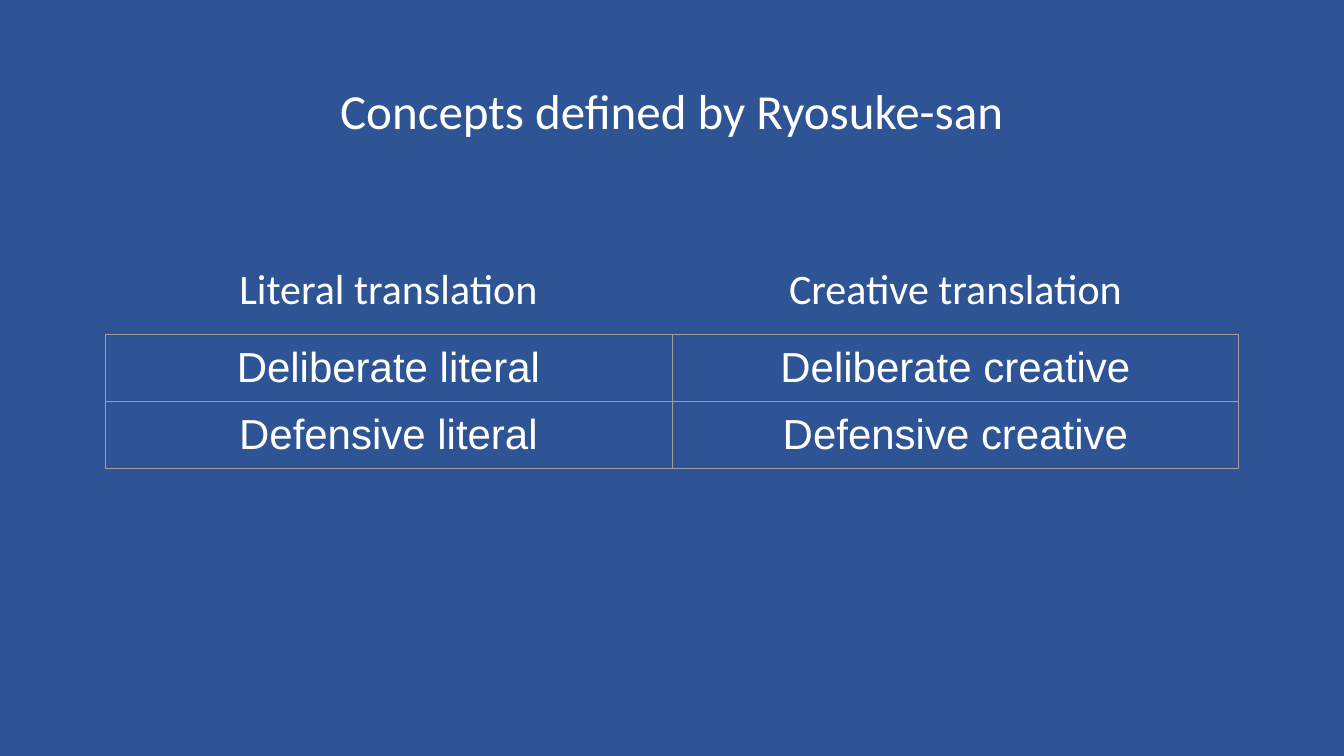
from dataclasses import dataclass

from lxml import etree
from pptx import Presentation
from pptx.dml.color import RGBColor
from pptx.enum.text import MSO_ANCHOR, PP_ALIGN
from pptx.oxml.ns import qn
from pptx.util import Pt

CENTER = PP_ALIGN.CENTER
TOP = MSO_ANCHOR.TOP
MIDDLE = MSO_ANCHOR.MIDDLE

COLORS = {"background": "2F5496", "text": "FFFFFF", "border": "9E9E9E"}
BORDER_SIDES = ("a:lnL", "a:lnR", "a:lnT", "a:lnB")
BORDER_WIDTH = 0.75
MARGIN = 7.2

TABLE_LEFT = 75
TABLE_TOP = 239
TABLE_HEIGHT = 100.8
COLUMN_WIDTH = 405
ROW_HEIGHT = 30
HEADING_TOP = 180
HEADING_HEIGHT = 51

CONCEPTS = [
    ["Deliberate literal", "Deliberate creative"],
    ["Defensive literal", "Defensive creative"],
]


@dataclass(frozen=True)
class Label:
    text: str
    left: float
    top: float
    width: float
    height: float
    size: float = 30
    anchor: MSO_ANCHOR = TOP
    margin_y: float = MARGIN
    line_spacing: float = 1.0


LABELS = [
    Label("Concepts defined by Ryosuke-san", 66, 28.8, 828, 104.4,
          size=35, anchor=MIDDLE, margin_y=3.6, line_spacing=0.9),
] + [
    Label(text, TABLE_LEFT + column * COLUMN_WIDTH, HEADING_TOP,
          COLUMN_WIDTH, HEADING_HEIGHT)
    for column, text in enumerate(["Literal translation", "Creative translation"])
]


def apply_format(target, values: dict) -> None:
    for name, value in values.items():
        setattr(target, name, value)


def margins(vertical: float) -> dict:
    return {
        "margin_left": Pt(MARGIN),
        "margin_right": Pt(MARGIN),
        "margin_top": Pt(vertical),
        "margin_bottom": Pt(vertical),
    }


def write_text(frame, text: str, font_name: str, size: float,
               line_spacing: float = 1.0) -> None:
    paragraph = frame.paragraphs[0]
    apply_format(paragraph, {"alignment": CENTER, "line_spacing": line_spacing})
    run = paragraph.add_run()
    run.text = text
    apply_format(run.font, {"name": font_name, "size": Pt(size), "bold": False})
    run.font.color.rgb = RGBColor.from_string(COLORS["text"])


def draw_label(slide, label: Label) -> None:
    box = slide.shapes.add_textbox(
        Pt(label.left), Pt(label.top), Pt(label.width), Pt(label.height))
    apply_format(box.text_frame, {
        "word_wrap": True, "vertical_anchor": label.anchor, **margins(label.margin_y)})
    write_text(box.text_frame, label.text, "Calibri", label.size, label.line_spacing)


def draw_borders(cell) -> None:
    properties = cell._tc.get_or_add_tcPr()
    for side in BORDER_SIDES:
        line = etree.SubElement(properties, qn(side), w=str(Pt(BORDER_WIDTH)))
        fill = etree.SubElement(line, qn("a:solidFill"))
        etree.SubElement(fill, qn("a:srgbClr"), val=COLORS["border"])


def draw_concepts(slide, rows: list[list[str]]) -> None:
    column_count = len(rows[0])
    frame = slide.shapes.add_table(
        len(rows), column_count, Pt(TABLE_LEFT), Pt(TABLE_TOP),
        Pt(COLUMN_WIDTH * column_count), Pt(ROW_HEIGHT * len(rows)))
    frame.height = Pt(TABLE_HEIGHT)
    table = frame.table
    apply_format(table, {"first_row": False, "horz_banding": False})
    for row_index, row in enumerate(rows):
        for column_index, text in enumerate(row):
            cell = table.cell(row_index, column_index)
            apply_format(cell, margins(MARGIN))
            draw_borders(cell)
            cell.fill.background()
            write_text(cell.text_frame, text, "Arial", 30)


def main() -> None:
    presentation = Presentation()
    apply_format(presentation, {"slide_width": Pt(960), "slide_height": Pt(540)})
    slide = presentation.slides.add_slide(presentation.slide_layouts[6])
    background = slide.background.fill
    background.solid()
    background.fore_color.rgb = RGBColor.from_string(COLORS["background"])
    draw_concepts(slide, CONCEPTS)
    for label in LABELS:
        draw_label(slide, label)
    presentation.save("out.pptx")


if __name__ == "__main__":
    main()
